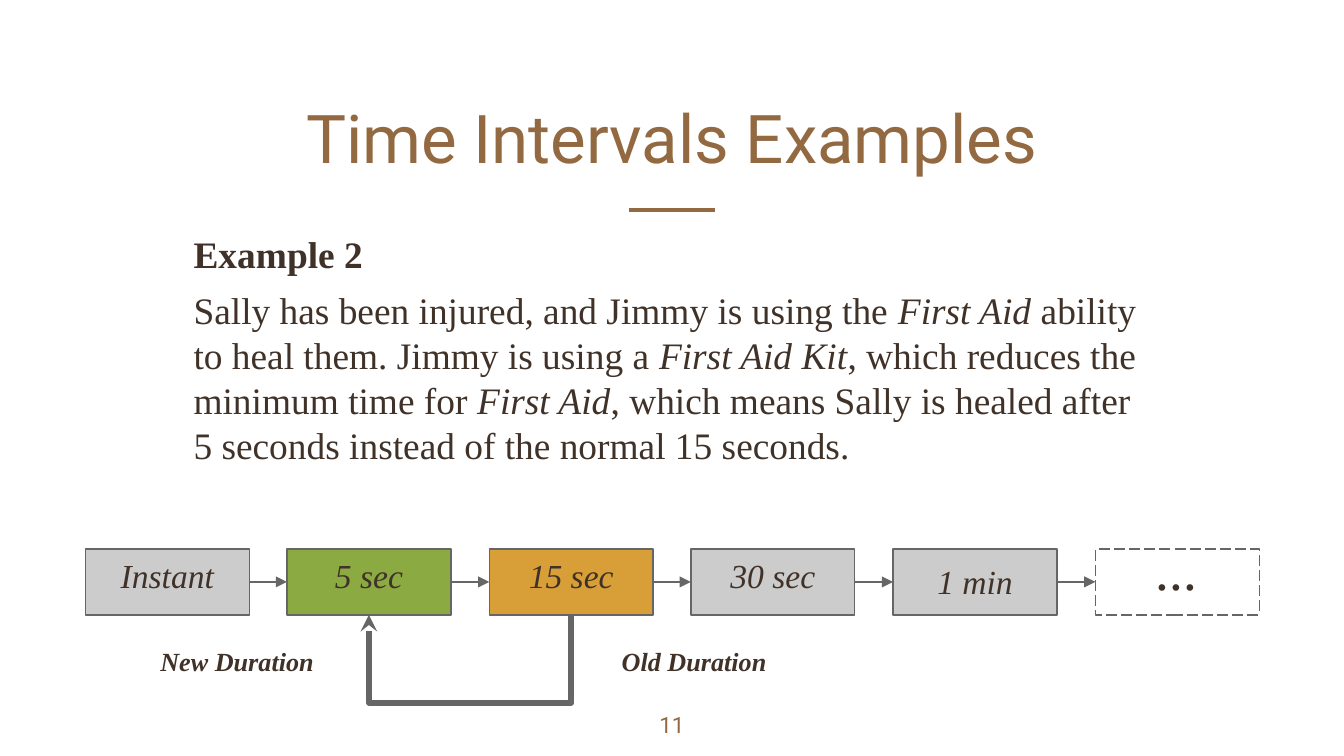
from lxml import etree
from pptx import Presentation
from pptx import util as u
from pptx.dml.color import RGBColor
from pptx.enum import dml, shapes, text
from pptx.oxml.ns import qn

BROWN = RGBColor(0x92, 0x69, 0x40)
DARK = RGBColor(0x40, 0x32, 0x28)
GRAY = RGBColor(0x66, 0x66, 0x66)
LIGHT = RGBColor(0xCC, 0xCC, 0xCC)
GREEN = RGBColor(0x8B, 0xAB, 0x42)
ORANGE = RGBColor(0xD8, 0x9F, 0x39)
SANS, SERIF = "Roboto", "Times New Roman"
MIDDLE, BOTTOM, TOP = text.MSO_ANCHOR.MIDDLE, text.MSO_ANCHOR.BOTTOM, text.MSO_ANCHOR.TOP
LEFT, CENTER = text.PP_ALIGN.LEFT, text.PP_ALIGN.CENTER

TITLE = "Time Intervals Examples"
HEADING = "Example 2"
STORY = [
    ("Sally has been injured, and Jimmy is using the ", False),
    ("First Aid", True),
    (" ability to heal them. Jimmy is using a ", False),
    ("First Aid Kit", True),
    (", which reduces the minimum time for ", False),
    ("First Aid", True),
    (", which means Sally is healed after 5 seconds instead of the normal 15 seconds.", False),
]
INTERVALS = [
    ("Instant", LIGHT, MIDDLE, 18),
    ("5 sec", GREEN, MIDDLE, 18),
    ("15 sec", ORANGE, MIDDLE, 18),
    ("30 sec", LIGHT, MIDDLE, 18),
    ("1 min", LIGHT, BOTTOM, 18),
    ("...", None, BOTTOM, 30),
]
DURATIONS = [("New Duration", 196, 314), ("Old Duration", 889, 288)]
NEW, OLD = 1, 2

PX = 4572
ROW_LEFT, ROW_RIGHT, ROW_TOP, BOX_WIDTH, BOX_HEIGHT = 127, 1874, 817, 244, 98
LOOP_BOTTOM = 1046


def px(*lengths):
    return [u.Emu(length * PX) for length in lengths]


def place(shape, *box):
    shape.left, shape.top, shape.width, shape.height = px(*box)


def box_left(index):
    return ROW_LEFT + index * (ROW_RIGHT - ROW_LEFT - BOX_WIDTH) // (len(INTERVALS) - 1)


def set_frame(shape, anchor=TOP, insets=(20, 20, 20, 20)):
    frame = shape.text_frame
    frame.word_wrap = True
    frame.auto_size = text.MSO_AUTO_SIZE.NONE
    frame.vertical_anchor = anchor
    frame.margin_left, frame.margin_top, frame.margin_right, frame.margin_bottom = px(*insets)
    return frame


def style(paragraph, size, name, color, bold=False, italic=False, align=CENTER):
    paragraph.alignment = align
    for run in paragraph.runs:
        font = run.font
        font.size, font.name, font.bold, font.italic = u.Pt(size), name, bold, italic
        font.color.rgb = color


def set_line(shape, color, width, arrow=None):
    shape.line.color.rgb = color
    shape.line.width = u.Pt(width)
    if arrow:
        etree.SubElement(shape.line._get_or_add_ln(), qn("a:tailEnd"), type=arrow)


def add_line(slide, start, end, color, width, arrow=None):
    line = slide.shapes.add_connector(shapes.MSO_CONNECTOR.STRAIGHT, *px(*start, *end))
    set_line(line, color, width, arrow)
    etree.SubElement(line._element.spPr, qn("a:effectLst"))


def add_label(slide, words, box, *font):
    label = slide.shapes.add_textbox(*px(*box))
    frame = set_frame(label)
    frame.text = words
    style(frame.paragraphs[0], *font)


def add_story(body):
    place(body, 268, 324, 1464, 754)
    frame = set_frame(body)
    frame.text = HEADING
    story = frame.add_paragraph()
    for words, _ in STORY:
        story.add_run().text = words
    for paragraph, before, bold in zip(frame.paragraphs, (0, 6), (True, False)):
        properties = paragraph._p.get_or_add_pPr()
        properties.set("marL", "0")
        properties.set("indent", "0")
        etree.SubElement(properties, qn("a:buNone"))
        paragraph.space_before = u.Pt(before)
        paragraph.line_spacing = 1.0
        style(paragraph, 20, SERIF, DARK, bold, align=LEFT)
    for run, (_, italic) in zip(story.runs, STORY):
        run.font.italic = italic


def add_intervals(slide):
    middle = ROW_TOP + BOX_HEIGHT // 2
    for index, (words, fill, anchor, size) in enumerate(INTERVALS):
        left = box_left(index)
        box = slide.shapes.add_shape(
            shapes.MSO_SHAPE.RECTANGLE, *px(left, ROW_TOP, BOX_WIDTH, BOX_HEIGHT))
        box.shadow.inherit = False
        set_line(box, GRAY, 0.75)
        if fill is None:
            box.fill.background()
            box.line.dash_style = dml.MSO_LINE.LONG_DASH
        else:
            box.fill.solid()
            box.fill.fore_color.rgb = fill
        frame = set_frame(box, anchor, (0, 0, 0, 20))
        frame.text = words
        style(frame.paragraphs[0], size, SERIF, DARK, italic=True)
        if index:
            add_line(slide, (box_left(index - 1) + BOX_WIDTH, middle), (left, middle),
                     GRAY, 0.75, "triangle")


def add_loop(slide):
    new, old = (box_left(index) + BOX_WIDTH // 2 for index in (NEW, OLD))
    top = ROW_TOP + BOX_HEIGHT
    builder = slide.shapes.build_freeform(old, top, scale=PX)
    builder.add_line_segments([(old, LOOP_BOTTOM), (new, LOOP_BOTTOM), (new, top)], close=False)
    loop = builder.convert_to_shape()
    loop.shadow.inherit = False
    loop.fill.background()
    set_line(loop, GRAY, 3, "stealth")


def main():
    presentation = Presentation()
    presentation.slide_width, presentation.slide_height = px(2000, 1125)
    slide = presentation.slides.add_slide(presentation.slide_layouts[1])

    title = slide.shapes.title
    place(title, 206, 95, 1588, 188)
    frame = set_frame(title, BOTTOM)
    frame.text = TITLE
    style(frame.paragraphs[0], 36, SANS, BROWN)

    add_line(slide, (936, 313), (1064, 313), BROWN, 2.25)
    add_label(slide, "11", (940, 1039, 120, 86), 12, SANS, BROWN)
    add_story(slide.placeholders[1])
    add_intervals(slide)
    add_loop(slide)
    for words, left, width in DURATIONS:
        add_label(slide, words, (left, 941, width, 98), 14, SERIF, DARK, True, True)

    presentation.save("out.pptx")


if __name__ == "__main__":
    main()
